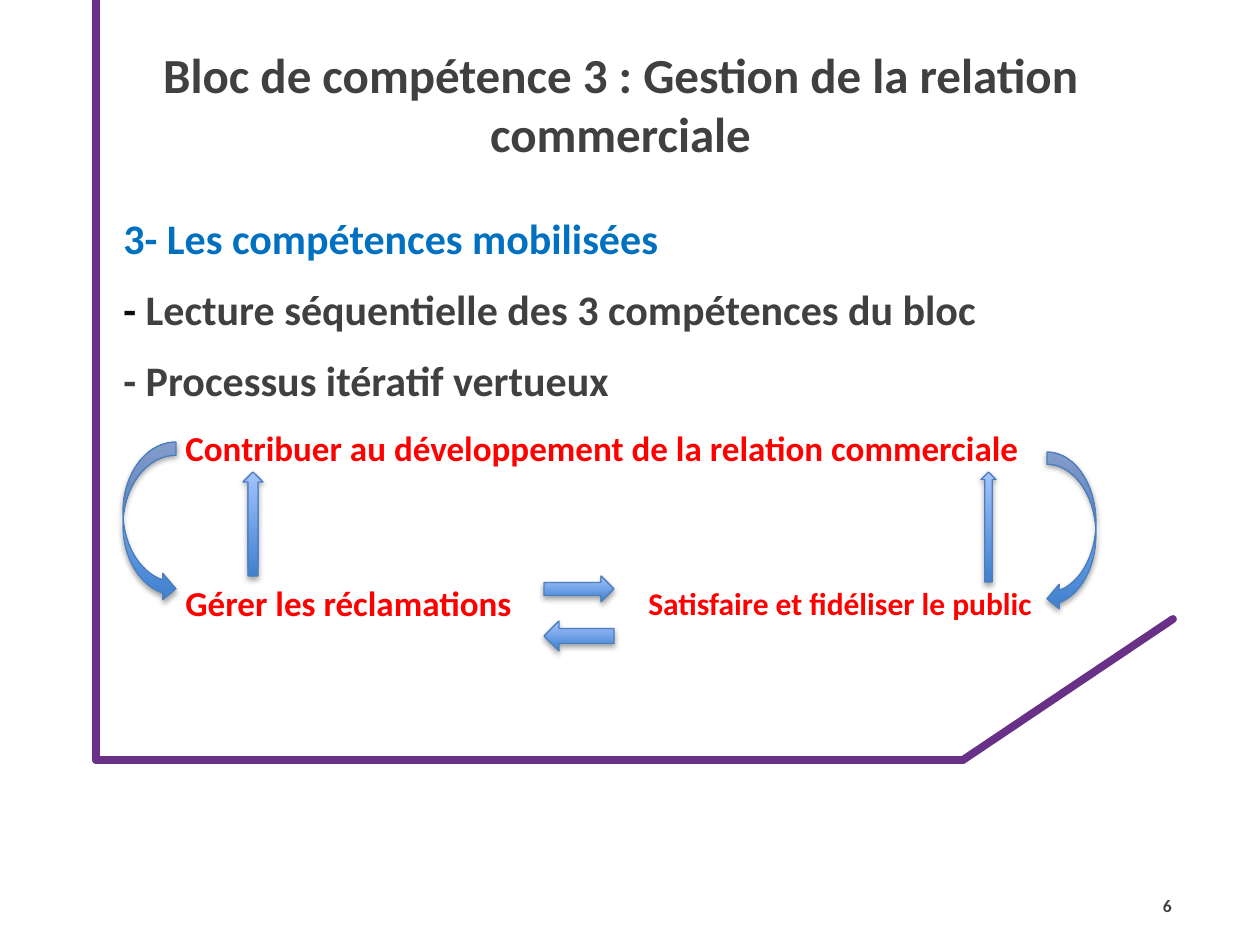
from lxml import etree
from pptx import Presentation
from pptx.dml.color import RGBColor
from pptx.enum.shapes import MSO_CONNECTOR, MSO_SHAPE
from pptx.enum.text import MSO_ANCHOR, PP_ALIGN
from pptx.oxml import parse_xml
from pptx.oxml.ns import nsdecls, qn
from pptx.util import Emu, Pt

STRAIGHT = MSO_CONNECTOR.STRAIGHT
CURVED_LEFT, CURVED_RIGHT = MSO_SHAPE.CURVED_LEFT_ARROW, MSO_SHAPE.CURVED_RIGHT_ARROW
LEFT_ARROW, RIGHT_ARROW, UP_ARROW = MSO_SHAPE.LEFT_ARROW, MSO_SHAPE.RIGHT_ARROW, MSO_SHAPE.UP_ARROW
TOP, MIDDLE = MSO_ANCHOR.TOP, MSO_ANCHOR.MIDDLE
LEFT, CENTER, RIGHT = PP_ALIGN.LEFT, PP_ALIGN.CENTER, PP_ALIGN.RIGHT

PX_PER_INCH = 126
FONT = "Calibri"
COLORS = {
    "frame": "683086",
    "text": "404040",
    "dash": "0D0D0D",
    "heading": "0070C0",
    "skill": "FF0000",
    "arrow_dark": "3F80CE",
    "arrow_light": "A4C4FF",
    "arrow_line": "4B7EBC",
}


def px(value):
    """Turn a length in px into EMU."""
    return Emu(round(value * 914400 / PX_PER_INCH))


def color(name):
    """Return a named colour."""
    return RGBColor.from_string(COLORS[name])


def add_text(slide, box, paragraphs, size, align=LEFT, anchor=TOP, space_after=0):
    """Add a bold text box; each paragraph is a list of (text, colour) runs."""
    text_frame = slide.shapes.add_textbox(*map(px, box)).text_frame
    text_frame.word_wrap = True
    text_frame.vertical_anchor = anchor
    for index, runs in enumerate(paragraphs):
        paragraph = text_frame.add_paragraph() if index else text_frame.paragraphs[0]
        paragraph.alignment = align
        paragraph.space_after = Pt(space_after)
        for text, color_name in runs:
            run = paragraph.add_run()
            run.text = text
            run.font.name = FONT
            run.font.size = Pt(size)
            run.font.bold = True
            run.font.color.rgb = color(color_name)


def add_frame(slide, left, top, width, height):
    """Draw the purple frame with its slanted corner."""
    bottom, corner = top + height, left + 867
    points = [(left, top), (left, bottom), (corner, bottom), (left + width, bottom - 141)]
    for start, end in zip(points, points[1:]):
        line = slide.shapes.add_connector(STRAIGHT, *map(px, start + end))
        line.line.color.rgb = color("frame")
        line.line.width = Pt(4.5)
        line.line._get_or_add_ln().set("cap", "rnd")
        etree.SubElement(line._element.spPr, qn("a:effectLst"))


def add_arrow(slide, kind, box):
    """Add a block arrow with a blue gradient and a soft shadow."""
    shape = slide.shapes.add_shape(kind, *map(px, box))
    shape.fill.gradient()
    shape.fill.gradient_angle = 90
    for stop, name in zip(shape.fill.gradient_stops, ("arrow_dark", "arrow_light")):
        stop.color.rgb = color(name)
    shape.line.color.rgb = color("arrow_line")
    shape.line.width = Pt(0.75)
    shape.shadow.inherit = False
    shape._element.spPr.find(qn("a:effectLst")).append(parse_xml(
        f'<a:outerShdw {nsdecls("a")} blurRad="40000" dist="23000" dir="5400000" rotWithShape="0">'
        '<a:srgbClr val="000000"><a:alpha val="35000"/></a:srgbClr></a:outerShdw>'))


def add_skill_cycle(slide, left, top):
    """Place the three skills and the arrows that link them."""
    skills = [
        ("Contribuer au développement de la relation commerciale", 50, 0, 900, 20),
        ("Gérer les réclamations", 50, 155, 370, 20),
        ("Satisfaire et fidéliser le public", 513, 158, 430, 18),
    ]
    for text, x, y, width, size in skills:
        add_text(slide, (left + x, top + y, width, 50), [[(text, "skill")]], size)
    arrows = [
        (CURVED_LEFT, 924, 32, 49, 159),
        (CURVED_RIGHT, 0, 22, 53, 160),
        (RIGHT_ARROW, 421, 156, 70, 26),
        (LEFT_ARROW, 421, 201, 70, 30),
        (UP_ARROW, 858, 52, 15, 110),
        (UP_ARROW, 120, 52, 20, 104),
    ]
    for kind, x, y, width, height in arrows:
        add_arrow(slide, kind, (left + x, top + y, width, height))


def main():
    """Build and save the slide."""
    presentation = Presentation()
    presentation.slide_width, presentation.slide_height = px(1260), px(945)
    slide = presentation.slides.add_slide(presentation.slide_layouts[6])
    add_frame(slide, 96, 0, 1077, 760)
    add_text(slide, (1129, 881, 55, 50), [[("6", "text")]], 10, RIGHT, MIDDLE)
    title = "Bloc de compétence 3 : Gestion de la relation commerciale"
    add_text(slide, (111, 38, 1019, 132), [[(title, "text")]], 28, CENTER)
    add_text(slide, (111, 206, 1019, 210), [
        [("3- Les compétences mobilisées", "heading")],
        [("- ", "dash"), ("Lecture séquentielle des 3 compétences du bloc", "text")],
        [("- Processus itératif vertueux", "text")],
    ], 24, space_after=12)
    add_skill_cycle(slide, 123, 420)
    presentation.save("out.pptx")


if __name__ == "__main__":
    main()
